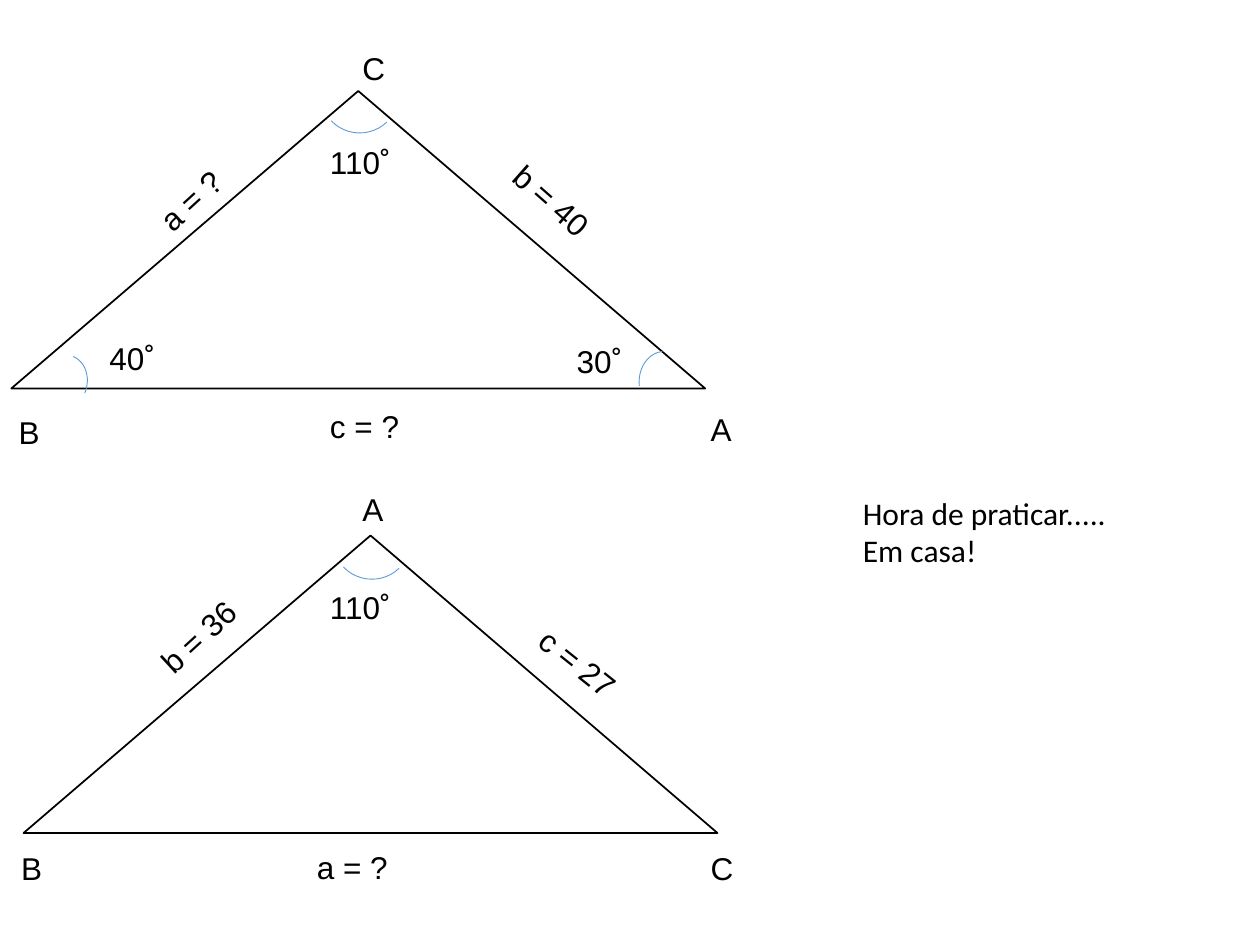
"""Build a practice slide with two triangles to solve by the laws of sines and cosines."""
from dataclasses import dataclass

import pptx
import pptx.dml.color
import pptx.enum.shapes
import pptx.enum.text
import pptx.util

Pt = pptx.util.Pt
SHAPES = pptx.enum.shapes.MSO_SHAPE
COLORS = {"ink": "000000", "paper": "FFFFFF", "angle": "5B9BD5"}
TRIANGLE_WIDTH, TRIANGLE_HEIGHT = 396.5, 170
LINE_HEIGHT = 29


@dataclass
class Label:
    text: str
    left: float
    top: float
    width: float = 34
    rotation: float = 0


@dataclass
class AngleMark:
    left: float
    top: float
    width: float
    height: float
    rotation: float


@dataclass
class Exercise:
    left: float
    top: float
    angles: list[AngleMark]
    labels: list[Label]


EXERCISES = [
    Exercise(
        6.5, 52,
        [AngleMark(183, 31, 45, 45, 136.4),
         AngleMark(21.5, 202.5, 28, 34, 21.9),
         AngleMark(362, 204, 36.5, 30, 264.2)],
        [Label("C", 200, 24.5),
         Label("B", 3.5, 232.5),
         Label("A", 399, 231),
         Label("a = ?", 80, 96, 67, 317.5),
         Label("b = 40", 281.5, 103.5, 75.5, 41.4),
         Label("c = ?", 181.5, 229, 60.5),
         Label("110˚", 181.5, 78, 60.5),
         Label("40˚", 55.5, 190, 49.5),
         Label("30˚", 322.5, 192, 60.5)],
    ),
    Exercise(
        13.5, 306,
        [AngleMark(190, 286, 45, 45, 136.4)],
        [Label("A", 200, 276.5, 47.5),
         Label("B", 5, 481.5),
         Label("C", 399, 481.5),
         Label("b = 36", 80.5, 348.5, 67.5, 317.5),
         Label("c = 27", 297.5, 366.5, 71.5, 38.6),
         Label("a = ?", 174, 481, 67),
         Label("110˚", 181.5, 332.5, 60.5)],
    ),
]


def rgb(name: str) -> pptx.dml.color.RGBColor:
    """Return the named palette colour."""
    return pptx.dml.color.RGBColor.from_string(COLORS[name])


def add_text(slide, text: str, left: float, top: float, width: float, *,
             height: float = LINE_HEIGHT, rotation: float = 0,
             font: str = "Arial", size: float = 18, color: str = "ink") -> None:
    """Add a wrapped text box with one paragraph per line of text."""
    box = slide.shapes.add_textbox(Pt(left), Pt(top), Pt(width), Pt(height))
    box.rotation = rotation
    frame = box.text_frame
    frame.word_wrap = True
    frame.auto_size = pptx.enum.text.MSO_AUTO_SIZE.SHAPE_TO_FIT_TEXT
    frame.text = text
    for paragraph in frame.paragraphs:
        for run in paragraph.runs:
            run.font.name = font
            run.font.size = Pt(size)
            run.font.color.rgb = rgb(color)


def add_outline(slide, preset: SHAPES, left: float, top: float, width: float, height: float, *,
                line: str, weight: float, fill: str | None = None, rotation: float = 0) -> None:
    """Add a preset shape with an outline and an optional fill."""
    outline = slide.shapes.add_shape(preset, Pt(left), Pt(top), Pt(width), Pt(height))
    outline.shadow.inherit = False
    outline.rotation = rotation
    outline.line.color.rgb = rgb(line)
    outline.line.width = Pt(weight)
    if fill:
        outline.fill.solid()
        outline.fill.fore_color.rgb = rgb(fill)
    else:
        outline.fill.background()


def add_exercise(slide, exercise: Exercise) -> None:
    """Draw a triangle with its angle marks and labels."""
    add_outline(slide, SHAPES.ISOSCELES_TRIANGLE, exercise.left, exercise.top,
                TRIANGLE_WIDTH, TRIANGLE_HEIGHT, line="ink", weight=1, fill="paper")
    for angle in exercise.angles:
        add_outline(slide, SHAPES.ARC, angle.left, angle.top, angle.width, angle.height,
                    line="angle", weight=0.5, rotation=angle.rotation)
    for label in exercise.labels:
        add_text(slide, label.text, label.left, label.top, label.width, rotation=label.rotation)


def main() -> None:
    """Create and save the presentation."""
    presentation = pptx.Presentation()
    presentation.slide_width, presentation.slide_height = Pt(720), Pt(540)
    slide = presentation.slides.add_slide(presentation.slide_layouts[6])
    for exercise in EXERCISES:
        add_exercise(slide, exercise)
    add_text(slide, "Hora de praticar.....\nEm casa!", 486, 278.5, 165.5, height=51, font="Calibri")
    presentation.save("out.pptx")


if __name__ == "__main__":
    main()
